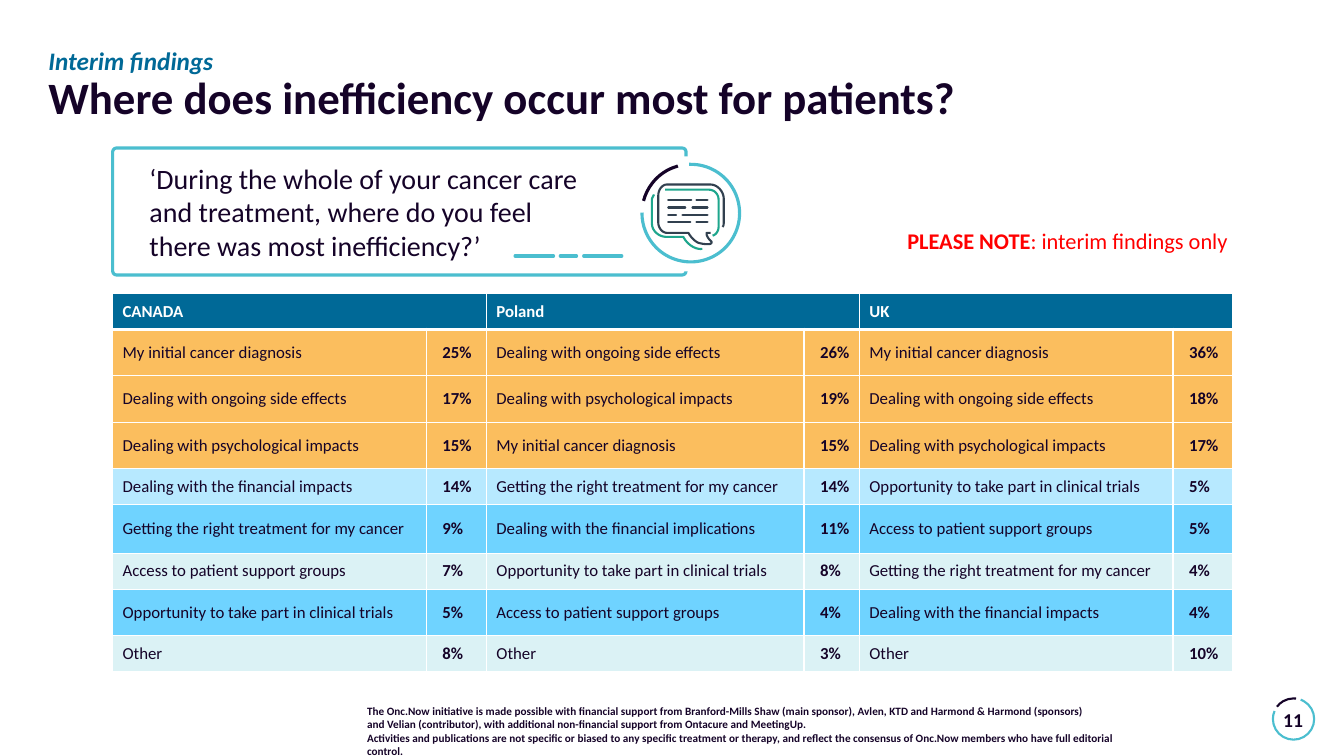
from lxml.etree import SubElement
from pptx import Presentation
from pptx.dml.color import RGBColor
from pptx.enum.shapes import MSO_CONNECTOR, MSO_SHAPE
from pptx.enum.text import MSO_ANCHOR, PP_ALIGN
from pptx.oxml.ns import qn
from pptx.util import Cm, Pt

COLORS = {
    "white": "FFFFFF", "ink": "150328", "blue": "006997", "teal": "4BBECF",
    "slate": "31404F", "green": "1EA68D", "red": "FF0000", "orange": "FBBE5E",
    "pale": "B7E9FF", "sky": "6FD3FF", "mist": "DBF2F5",
}


def rgb(name):
    return RGBColor.from_string(COLORS[name])


def bezier(start, control_1, control_2, end, steps=8):
    for step in range(1, steps + 1):
        t = step / steps
        u = 1 - t
        yield tuple(
            u**3 * a + 3 * u * u * t * b + 3 * u * t * t * c + t**3 * d
            for a, b, c, d in zip(start, control_1, control_2, end)
        )


class SlideBuilder:
    def __init__(self, slide, font="Calibri"):
        self.slide = slide
        self.font = font

    def fill_text(self, frame, paragraphs, align=PP_ALIGN.LEFT, spacing=None,
                  margins=(0, 0, 0, 0), anchor=MSO_ANCHOR.TOP, wrap=True):
        frame.word_wrap = wrap
        frame.vertical_anchor = anchor
        (frame.margin_left, frame.margin_top,
         frame.margin_right, frame.margin_bottom) = map(Cm, margins)
        for index, runs in enumerate(paragraphs):
            paragraph = frame.add_paragraph() if index else frame.paragraphs[0]
            paragraph.alignment = align
            if spacing:
                paragraph.line_spacing = spacing
            for position, (text, size, color, bold, italic, new_line) in enumerate(runs):
                if position and new_line:
                    paragraph.add_line_break()
                self.add_run(paragraph, text, size, color, bold, italic)

    def add_run(self, paragraph, text, size, color, bold, italic=False):
        run = paragraph.add_run()
        run.text = text
        run.font.name = self.font
        run.font.size = Pt(size)
        run.font.bold = bold
        run.font.italic = italic
        run.font.color.rgb = rgb(color)

    def text(self, left, top, width, height, paragraphs, **options):
        box = self.slide.shapes.add_textbox(Cm(left), Cm(top), Cm(width), Cm(height))
        self.fill_text(box.text_frame, paragraphs, **options)

    def paint(self, shape, fill, line, weight):
        shape.shadow.inherit = False
        if fill:
            shape.fill.solid()
            shape.fill.fore_color.rgb = rgb(fill)
        else:
            shape.fill.background()
        if line:
            shape.line.color.rgb = rgb(line)
            shape.line.width = Pt(weight)
        else:
            shape.line.fill.background()

    def shape(self, kind, left, top, width, height, fill=None, line=None,
              weight=2.25, adjustments=(), rotation=0):
        shape = self.slide.shapes.add_shape(kind, Cm(left), Cm(top), Cm(width), Cm(height))
        for index, value in enumerate(adjustments):
            shape.adjustments[index] = value
        shape.rotation = rotation
        self.paint(shape, fill, line, weight)
        return shape

    def ring(self, left, top, size, weight, rotation=0):
        for color, angles in (("teal", (174.12, 121.7)), ("ink", (130, 166.15))):
            self.shape(MSO_SHAPE.ARC, left, top, size, size, line=color,
                       weight=weight, adjustments=angles, rotation=rotation)

    def rule(self, start, end, y, color, weight):
        line = self.slide.shapes.add_connector(
            MSO_CONNECTOR.STRAIGHT, Cm(start), Cm(y), Cm(end), Cm(y))
        line.line.color.rgb = rgb(color)
        line.line.width = Pt(weight)
        properties = line._element.spPr
        properties.find(qn("a:ln")).set("cap", "rnd")
        SubElement(properties, qn("a:effectLst"))

    def outline(self, start, segments, color, weight=1.5):
        points = [start]
        for segment in segments:
            points.extend(bezier(points[-1], *segment) if len(segment) == 3 else segment)
        points = [(Cm(x), Cm(y)) for x, y in points]
        builder = self.slide.shapes.build_freeform(*points[0])
        builder.add_line_segments(points[1:], close=False)
        self.paint(builder.convert_to_shape(), None, color, weight)

    def cell(self, cell, text, fill, color, bold, margins, bottom_weight):
        properties = cell._tc.get_or_add_tcPr()
        for side, weight in (("L", 1), ("R", 1), ("T", 1), ("B", bottom_weight)):
            border = SubElement(properties, qn(f"a:ln{side}"), w=str(Pt(weight)))
            solid = SubElement(border, qn("a:solidFill"))
            SubElement(solid, qn("a:srgbClr"), val=COLORS["white"])
        cell.fill.solid()
        cell.fill.fore_color.rgb = rgb(fill)
        cell.vertical_anchor = MSO_ANCHOR.MIDDLE
        cell.margin_left, cell.margin_right = map(Cm, margins)
        if text:
            self.add_run(cell.text_frame.paragraphs[0], text, 12, color, bold)

    def table(self, left, top, widths, heights, headers, rows, fills):
        frame = self.slide.shapes.add_table(
            len(heights), len(widths), Cm(left), Cm(top), Cm(sum(widths)), Cm(sum(heights)))
        table = frame.table
        table.first_row = table.horz_banding = False
        for column, width in zip(table.columns, widths):
            column.width = Cm(width)
        for row, height in zip(table.rows, heights):
            row.height = Cm(height)
        for index in range(len(widths)):
            label = "" if index % 2 else headers[index // 2]
            self.cell(table.cell(0, index), label, "blue", "white", True, (0.25, 0.25), 3)
            if index % 2:
                table.cell(0, index - 1).merge(table.cell(0, index))
        for row_index, (values, fill) in enumerate(zip(rows, fills), 1):
            for index, value in enumerate(values):
                share = index % 2 == 1
                self.cell(table.cell(row_index, index), value, fill, "ink", share,
                          (0.41, 0.05) if share else (0.25, 0.25), 1)


INITIAL = "My initial cancer diagnosis"
EFFECTS = "Dealing with ongoing side effects"
PSYCHOLOGICAL = "Dealing with psychological impacts"
FINANCIAL = "Dealing with the financial impacts"
TREATMENT = "Getting the right treatment for my cancer"
SUPPORT = "Access to patient support groups"
TRIALS = "Opportunity to take part in clinical trials"
ROWS = [
    (INITIAL, "25%", EFFECTS, "26%", INITIAL, "36%"),
    (EFFECTS, "17%", PSYCHOLOGICAL, "19%", EFFECTS, "18%"),
    (PSYCHOLOGICAL, "15%", INITIAL, "15%", PSYCHOLOGICAL, "17%"),
    (FINANCIAL, "14%", TREATMENT, "14%", TRIALS, "5%"),
    (TREATMENT, "9%", "Dealing with the financial implications", "11%", SUPPORT, "5%"),
    (SUPPORT, "7%", TRIALS, "8%", TREATMENT, "4%"),
    (TRIALS, "5%", SUPPORT, "4%", FINANCIAL, "4%"),
    ("Other", "8%", "Other", "3%", "Other", "10%"),
]
FILLS = ["orange"] * 3 + ["pale", "sky", "mist", "sky", "mist"]
FOOTER = [
    ["The Onc.Now initiative is made possible with financial support from "
     "Branford-Mills Shaw (main sponsor), Avlen, KTD and Harmond & Harmond (sponsors)",
     "and Velian (contributor), with additional non-financial support from "
     "Ontacure and MeetingUp."],
    ["Activities and publications are not specific or biased to any specific treatment "
     "or therapy, and reflect the consensus of Onc.Now members who have full editorial control."],
]
QUOTE = ["‘During the whole of your cancer care", "and treatment, where do you feel",
         "there was most inefficiency?’"]
BUBBLE = [
    ((18.24, 5.69), (18.24, 5.64), (18.24, 5.61)), [(18.24, 5)],
    ((18.24, 4.83), (18.08, 4.65), (17.91, 4.65)), [(16.81, 4.65)],
    ((16.69, 4.65), (16.59, 4.78), (16.59, 4.93)), [(16.59, 5.61)],
    ((16.59, 5.74), (16.69, 5.87), (16.81, 5.87)), [(17.35, 5.87)],
    ((17.42, 5.99), (17.5, 6.07), (17.6, 6.12)),
    ((17.78, 6.17), (17.88, 6.15), (17.88, 6.15)),
    ((17.93, 6.15), (17.96, 6.1), (17.91, 6.07)),
    ((17.78, 5.94), (17.81, 5.87), (17.81, 5.87)), [(17.91, 5.87)],
]
BUBBLE_TOP = [((18.03, 5.92), (18.11, 5.84), (18.11, 5.72)), [(18.11, 5.03)],
              ((18.11, 4.9), (18.01, 4.78), (17.86, 4.78)), [(16.76, 4.78)]]
BUBBLE_SIDE = [((16.48, 4.93), (16.43, 4.98), (16.43, 5.03)), [(16.43, 5.64)],
               ((16.43, 5.82), (16.61, 5.97), (16.79, 5.97)), [(17.22, 5.97)],
               ((17.35, 6.22), (17.6, 6.3), (17.7, 6.27))]


def main():
    presentation = Presentation()
    presentation.slide_width, presentation.slide_height = Cm(33.87), Cm(19.05)
    builder = SlideBuilder(presentation.slides.add_slide(presentation.slide_layouts[6]))

    builder.text(31.88, 17.83, 1.42, 0.61, [[("11", 14, "ink", True, False, False)]],
                 align=PP_ALIGN.CENTER)
    builder.ring(32.08, 17.6, 1.04, 1.5)
    builder.text(9.25, 17.75, 19.53, 1.02,
                 [[(line, 8, "ink", True, False, True) for line in lines] for lines in FOOTER])

    quote = builder.shape(MSO_SHAPE.ROUNDED_RECTANGLE, 2.84, 3.73, 14.45, 3.2,
                          fill="white", line="teal", adjustments=(0.03,))
    builder.fill_text(quote.text_frame,
                      [[(line, 20, "ink", False, False, True) for line in QUOTE]],
                      margins=(0.9, 0.3, 0.4, 0.3), anchor=MSO_ANCHOR.MIDDLE)
    builder.shape(MSO_SHAPE.OVAL, 15.9, 3.94, 2.9, 2.9, fill="white")
    builder.text(1.22, 1.22, 25.02, 2.54, [[
        ("Interim findings", 18, "blue", True, True, False),
        ("Where does inefficiency occur most for patients?", 32, "ink", True, False, True),
    ]], spacing=0.9)

    builder.ring(16.18, 4.14, 2.46, 2.25, rotation=337.8)
    for start, end in ((12.98, 13.95), (14.12, 14.53), (14.71, 15.67)):
        builder.rule(start, end, 6.45, "teal", 2.25)
    builder.outline((18.21, 5.72), BUBBLE, "slate")
    gaps = ((17.42, 17.55), (17.27, 17.45), (17.04, 17.2), (17.4, 17.55))
    for index, (gap_start, gap_end) in enumerate(gaps):
        for start, end in ((16.84, gap_start), (gap_end, 17.83)):
            builder.rule(start, end, 5.05 + 0.18 * index, "slate", 1.5)
    builder.outline((17.96, 5.94), BUBBLE_TOP, "green")
    builder.outline((16.48, 4.9), BUBBLE_SIDE, "green")

    builder.table(2.84, 7.39, [7.9, 1.52, 8, 1.4, 7.9, 1.5],
                  [0.91, 1.17, 1.17, 1.17, 0.91, 1.22, 0.91, 1.17, 0.91],
                  ["CANADA", "Poland", "UK"], ROWS, FILLS)
    builder.text(22.4, 5.59, 8.79, 0.94, [[
        ("PLEASE NOTE", 16, "red", True, False, False),
        (": interim findings only", 16, "red", False, False, False),
    ]], align=PP_ALIGN.RIGHT, margins=(0.25, 0.13, 0.25, 0.13), wrap=False)
    presentation.save("out.pptx")


if __name__ == "__main__":
    main()
